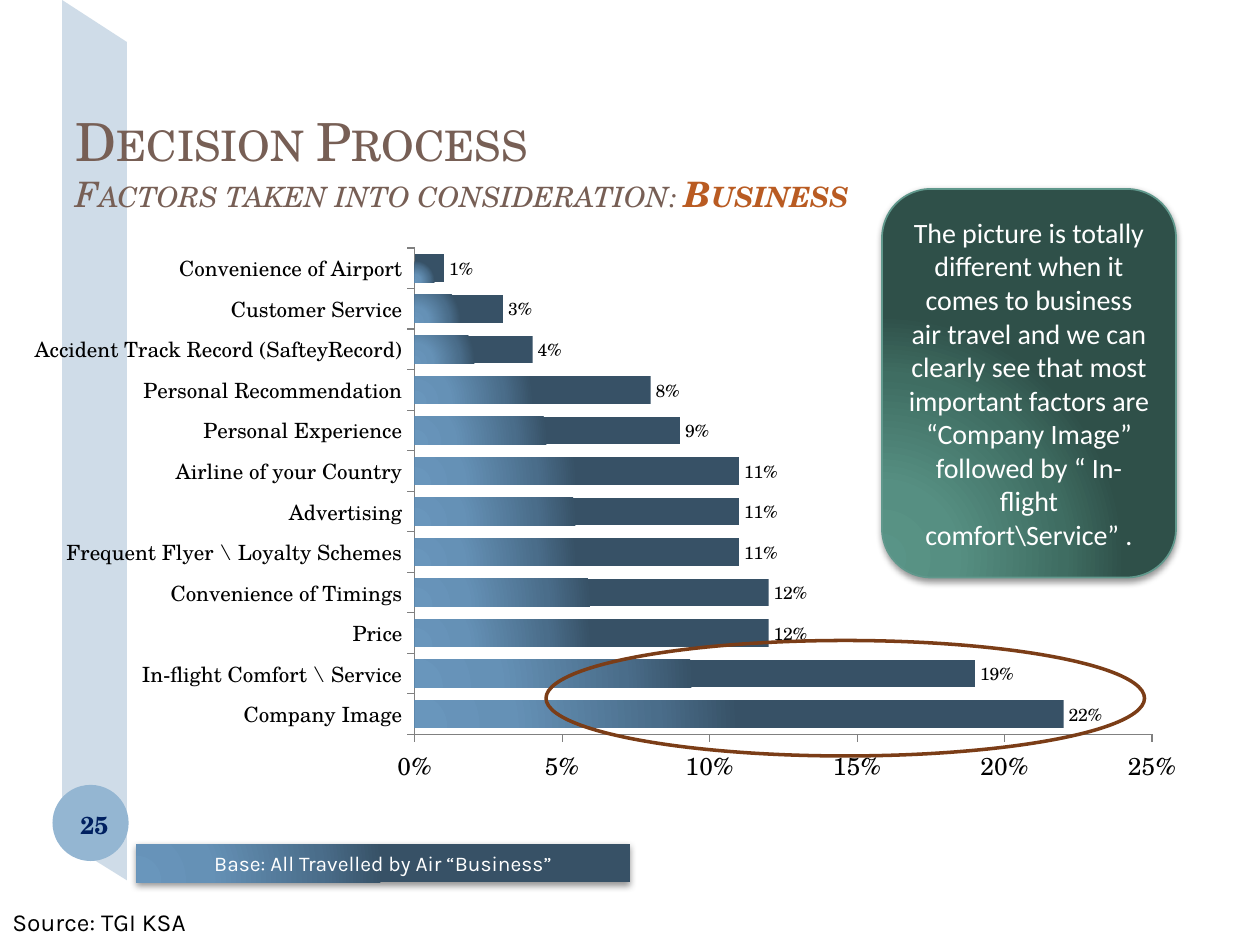
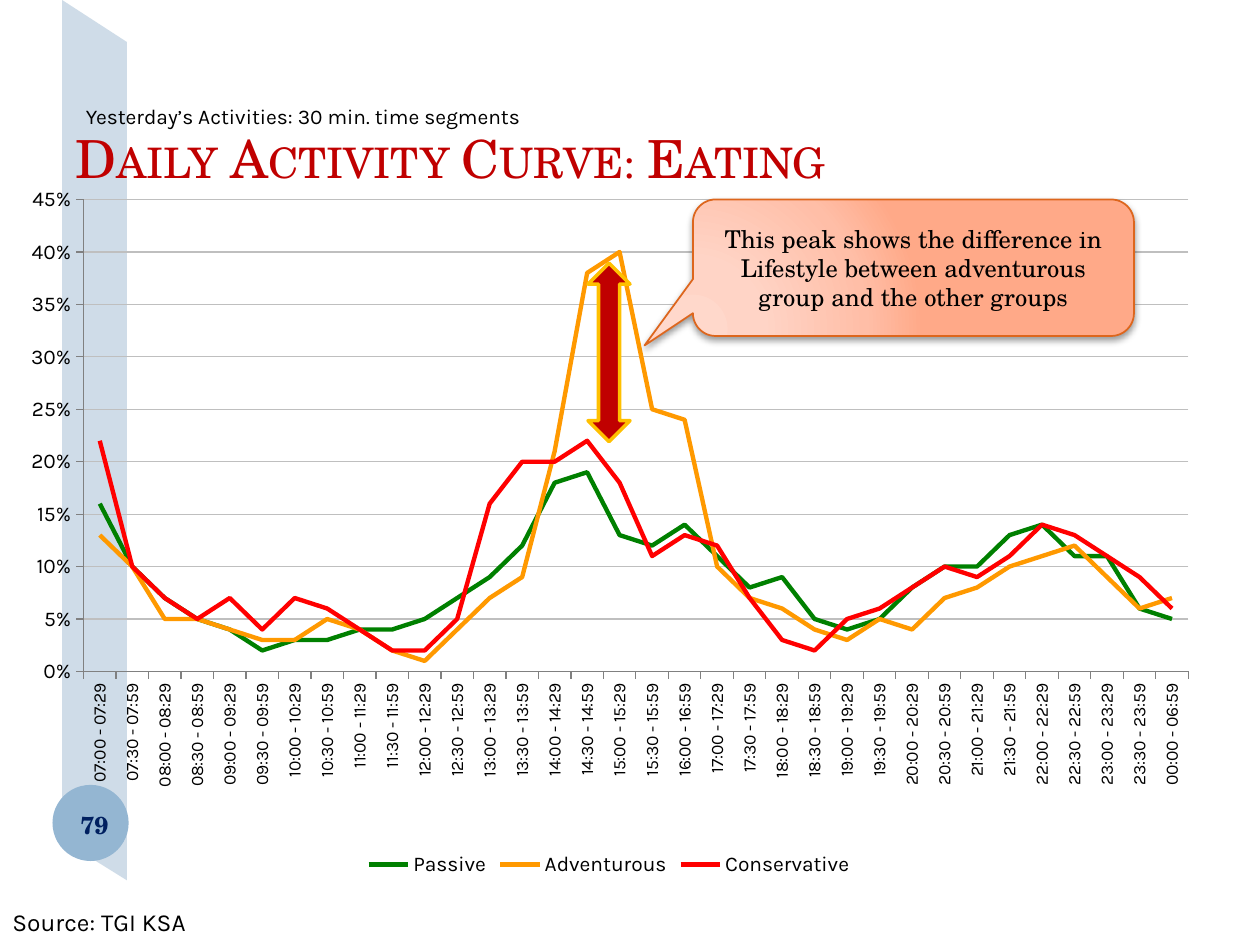
from pptx import Presentation
from pptx import util as u
from pptx.chart import data as cd
from pptx.dml import color as col
from pptx.enum import chart as ch, shapes as sh, text as tx
from pptx.oxml import parse_xml
from pptx.oxml.ns import nsdecls, qn

Pt = u.Pt
SERIF, SANS, BODY = "TeX Gyre Schola", "Karla", "Calibri"
BLACK, WHITE, NAVY, GREY = "000000", "FFFFFF", "002060", "808080"
PALE, DISC, BROWN, RUST, RED = "C8D7E5", "94B6D2", "775F55", "B95B22", "C00000"
BLUES = ["6996BC", "6591B6", "4A6D8A", "375166"]
GREENS = ["599487", "568F82", "3F6D62", "2F5049"]
PEACHES = ["FFD8CB", "FFD4C6", "FFBEA7", "FFA988"]
KIND = sh.MSO_SHAPE
MID = tx.MSO_ANCHOR.MIDDLE

FACTORS = [
    ("Company Image", 22), ("In-flight Comfort \\ Service", 19), ("Price", 12),
    ("Convenience of Timings", 12), ("Frequent Flyer \\ Loyalty Schemes", 11),
    ("Advertising", 11), ("Airline of your Country", 11),
    ("Personal Experience", 9), ("Personal Recommendation", 8),
    ("Accident Track Record (SafteyRecord)", 4), ("Customer Service", 3),
    ("Convenience of Airport", 1)]

GROUPS = [
    ("Passive", "008000",
     [16, 10, 7, 5, 4, 2, 3, 3, 4, 4, 5, 7, 9, 12, 18, 19, 13,
      12, 14, 11, 8, 9, 5, 4, 5, 8, 10, 10, 13, 14, 11, 11, 6, 5]),
    ("Adventurous", "FF9900",
     [13, 10, 5, 5, 4, 3, 3, 5, 4, 2, 1, 4, 7, 9, 21, 38, 40,
      25, 24, 10, 7, 6, 4, 3, 5, 4, 7, 8, 10, 11, 12, 9, 6, 7]),
    ("Conservative", "FF0000",
     [22, 10, 7, 5, 7, 4, 7, 6, 4, 2, 2, 5, 16, 20, 20, 22, 18,
      11, 13, 12, 7, 3, 2, 5, 6, 8, 10, 9, 11, 14, 13, 11, 9, 6])]


def rgb(code):
    """Turn a hex string into a colour."""
    return col.RGBColor.from_string(code)


def share(nums):
    """Turn whole percentages into fractions."""
    return [n / 100 for n in nums]


def slots():
    """List the half-hour slots, with one long slot and the night slot."""
    spans = []
    for hour in range(7, 24):
        if hour == 16:
            spans.append("16:00 - 16:59")
        else:
            spans += [f"{hour:02}:{m:02} - {hour:02}:{m + 29}" for m in (0, 30)]
    return spans + ["00:00 - 06:59"]


def style(font, size, name, color):
    """Set the size, face and colour of a font."""
    font.size, font.name = Pt(size), name
    font.color.rgb = rgb(color)


def write(par, words, size=14, font=SERIF, color=BLACK, bold=False,
          slant=False, caps=False):
    """Add a formatted run to a paragraph."""
    run = par.add_run()
    run.text = words
    style(run.font, size, font, color)
    run.font.bold, run.font.italic = bold, slant
    if caps:
        run.font._element.set("cap", "small")


def label(slide, box, words, align=None, anchor=None, **form):
    """Add a wrapped text box."""
    frame = slide.shapes.add_textbox(*map(Pt, box)).text_frame
    frame.word_wrap = True
    frame.vertical_anchor = anchor
    frame.paragraphs[0].alignment = align
    write(frame.paragraphs[0], words, **form)


def glow(fill, root, stops):
    """Swap the fill found under root for the corner glow gradient."""
    fill.background()
    marks = "".join(
        f'<a:gs pos="{pos}000"><a:srgbClr val="{code}"/></a:gs>'
        for pos, code in zip((0, 30, 75, 100), stops))
    blank = next(root.iter(qn("a:noFill")))
    blank.getparent().replace(blank, parse_xml(
        f'<a:gradFill {nsdecls("a")} rotWithShape="1"><a:gsLst>{marks}</a:gsLst>'
        '<a:path path="circle"><a:fillToRect l="5000" t="100000" r="120000" '
        'b="10000"/></a:path></a:gradFill>'))


def shade(shape, alpha, dist):
    """Give a shape a soft shadow below it."""
    effects = next(shape.element.iter(qn("a:effectLst")))
    effects.append(parse_xml(
        f'<a:outerShdw {nsdecls("a")} blurRad="{Pt(4)}" dist="{Pt(dist)}" '
        'dir="5400000" rotWithShape="0"><a:srgbClr val="000000">'
        f'<a:alpha val="{alpha}000"/></a:srgbClr></a:outerShdw>'))


def finish(shape, fill=None, line=None, width=1):
    """Set a flat, gradient or empty fill and the outline of a shape."""
    shape.shadow.inherit = False
    if isinstance(fill, list):
        glow(shape.fill, shape.element, fill)
    elif fill:
        shape.fill.solid()
        shape.fill.fore_color.rgb = rgb(fill)
    else:
        shape.fill.background()
    if line:
        shape.line.color.rgb = rgb(line)
        shape.line.width = Pt(width)
    else:
        shape.line.fill.background()
    return shape


def draw(slide, kind, box, *look):
    """Add a preset shape."""
    return finish(slide.shapes.add_shape(kind, *map(Pt, box)), *look)


def panel(slide, kind, box, words, fill, line=None, alpha=42, dist=1.6, **form):
    """Add a glowing, shadowed shape with centred text."""
    shape = draw(slide, kind, box, fill, line)
    shade(shape, alpha, dist)
    frame = shape.text_frame
    frame.word_wrap = True
    frame.vertical_anchor = MID
    frame.paragraphs[0].alignment = tx.PP_ALIGN.CENTER
    write(frame.paragraphs[0], words, **form)
    return shape


def base(deck, number, top):
    """Add a slide with band, page number and source; return its title line."""
    slide = deck.slides.add_slide(deck.slide_layouts[5])
    left, right = Pt(35.5), Pt(72.5)
    pen = slide.shapes.build_freeform(left, 0)
    pen.add_line_segments(
        [(right, Pt(24)), (right, Pt(503)), (left, Pt(480))], close=True)
    band = finish(pen.convert_to_shape(), PALE)
    tint = next(band.element.iter(qn("a:srgbClr")))
    tint.append(parse_xml(f'<a:alpha {nsdecls("a")} val="87000"/>'))
    draw(slide, KIND.OVAL, (30, 448.5, 43.5, 43.5), DISC)
    title = slide.shapes.title
    band.element.getparent().append(title.element)
    title.left, title.top, title.width, title.height = map(Pt, (36, top, 588, 90))
    frame = title.text_frame
    frame.word_wrap = True
    frame.auto_size = tx.MSO_AUTO_SIZE.NONE
    frame.vertical_anchor = tx.MSO_ANCHOR.BOTTOM
    frame.paragraphs[0].alignment = tx.PP_ALIGN.LEFT
    label(slide, (30, 451, 48, 41), number, tx.PP_ALIGN.CENTER, MID,
          color=NAVY, bold=True)
    label(slide, (0, 515, 306, 24.5), "Source: TGI KSA", font=SANS)
    return slide, frame.paragraphs[0]


def graph(slide, kind, box, cats, rows, plot, top, size, small, font):
    """Add a percentage chart with a fixed inner plot area."""
    data = cd.CategoryChartData(number_format="0%")
    data.categories = cats
    for name, nums in rows:
        data.add_series(name, share(nums))
    chart = slide.shapes.add_chart(kind, *map(Pt, box), data).chart
    chart.has_title = chart.has_legend = False
    style(chart.font, size, font, BLACK)
    chart._chartSpace.chart.addnext(parse_xml(
        f'<c:spPr {nsdecls("c", "a")}><a:noFill/><a:ln><a:noFill/></a:ln></c:spPr>'))
    area = next(chart._chartSpace.iter(qn("c:plotArea")))
    for old in area.findall(qn("c:layout")):
        area.remove(old)
    spots = "".join(f'<c:{tag} val="{val}"/>' for tag, val in zip("xywh", plot))
    area.insert(0, parse_xml(
        f'<c:layout {nsdecls("c")}><c:manualLayout><c:layoutTarget val="inner"/>'
        f'<c:xMode val="edge"/><c:yMode val="edge"/>{spots}'
        '</c:manualLayout></c:layout>'))
    for axis, pts in ((chart.category_axis, small), (chart.value_axis, size)):
        style(axis.tick_labels.font, pts, font, BLACK)
        axis.has_major_gridlines = False
        axis.major_tick_mark = ch.XL_TICK_MARK.OUTSIDE
        axis.format.line.color.rgb = rgb(GREY)
    scale = chart.value_axis
    scale.minimum_scale, scale.maximum_scale, scale.major_unit = 0, top, 0.05
    scale.tick_labels.number_format = "0%"
    scale.tick_labels.number_format_is_linked = False
    return chart


def bars(slide):
    """Add the bar chart of decision factors."""
    names, nums = zip(*FACTORS)
    chart = graph(slide, ch.XL_CHART_TYPE.BAR_CLUSTERED, (18, 126, 672, 384),
                  names, [("Series 1", nums)], (0.326, 0.041, 0.627, 0.724),
                  0.25, 14, 12, SERIF)
    plot = chart.plots[0]
    plot.gap_width = 47
    plot.vary_by_categories = False
    series = plot.series[0]
    glow(series.format.fill, series._element, BLUES)
    plot.has_data_labels = True
    tags = plot.data_labels
    tags.show_value = True
    tags.number_format, tags.number_format_is_linked = "0%", False
    tags.position = ch.XL_LABEL_POSITION.OUTSIDE_END
    style(tags.font, 10, SERIF, BLACK)


def curves(slide):
    """Add the line chart of eating through the day."""
    chart = graph(slide, ch.XL_CHART_TYPE.LINE, (6, 102, 684, 402), slots(),
                  [(name, nums) for name, _, nums in GROUPS],
                  (0.061, 0.03, 0.923, 0.671), 0.45, 12, 10, SANS)
    for series, (_, color, _) in zip(chart.plots[0].series, GROUPS):
        series.smooth = False
        series.format.line.color.rgb = rgb(color)
        series.format.line.width = Pt(2.5)
    scale = chart.value_axis
    scale.has_major_gridlines = True
    scale.major_gridlines.format.line.color.rgb = rgb("BFBFBF")
    scale.major_gridlines.format.line.width = Pt(0.75)
    turn = next(chart.category_axis._element.iter(qn("a:bodyPr")))
    turn.set("rot", "-5400000")
    turn.set("vert", "horz")
    chart.has_legend = True
    chart.legend.position = ch.XL_LEGEND_POSITION.BOTTOM
    chart.legend.include_in_layout = False
    style(chart.legend.font, 12, SANS, BLACK)


def factors(deck):
    """Build the slide on business decision factors."""
    slide, head = base(deck, "25", 36)
    write(head, "Decision Process", size=30, color=BROWN, caps=True)
    head.add_line_break()
    sub = dict(size=20, slant=True, caps=True)
    write(head, "Factors taken into consideration: ", color=BROWN, **sub)
    write(head, "Business", color=RUST, bold=True, **sub)
    bars(slide)
    panel(slide, KIND.RECTANGLE, (78, 482.4, 282, 21.8),
          "Base: All Travelled by Air “Business”", BLUES,
          size=12, font=SANS, color=WHITE)
    panel(slide, KIND.ROUNDED_RECTANGLE, (504, 108, 168, 222),
          "The picture is totally different when it comes to business air travel "
          "and we can clearly see that most important factors are “Company Image” "
          "followed by “ In-flight comfort\\Service” .", GREENS, "60988C",
          size=16, font=BODY, color=WHITE)
    draw(slide, KIND.OVAL, (312, 366, 342, 66), None, "7B3D17", 2)


def eating(deck):
    """Build the slide on the daily eating curve."""
    slide, head = base(deck, "79", 21.6)
    write(head, "Daily Activity Curve: Eating", size=30, color=RED, caps=True)
    curves(slide)
    label(slide, (42, 55.5, 270, 21.8),
          "Yesterday’s Activities: 30 min. time segments", size=12, font=SANS)
    arrow = draw(slide, KIND.LEFT_RIGHT_ARROW, (297, 189.4, 102, 24), RED,
                 "FFC000", 2)
    arrow.rotation = 90
    note = panel(slide, KIND.ROUNDED_RECTANGULAR_CALLOUT, (396, 114, 252, 78),
                 "This peak shows the difference in Lifestyle between "
                 "adventurous group and the other groups", PEACHES, "DD661D",
                 alpha=40, dist=2)
    note.adjustments[0], note.adjustments[1] = -0.61, 0.57


def main():
    """Build and save the deck."""
    deck = Presentation()
    deck.slide_width, deck.slide_height = Pt(720), Pt(540)
    factors(deck)
    eating(deck)
    deck.save("out.pptx")


if __name__ == "__main__":
    main()
